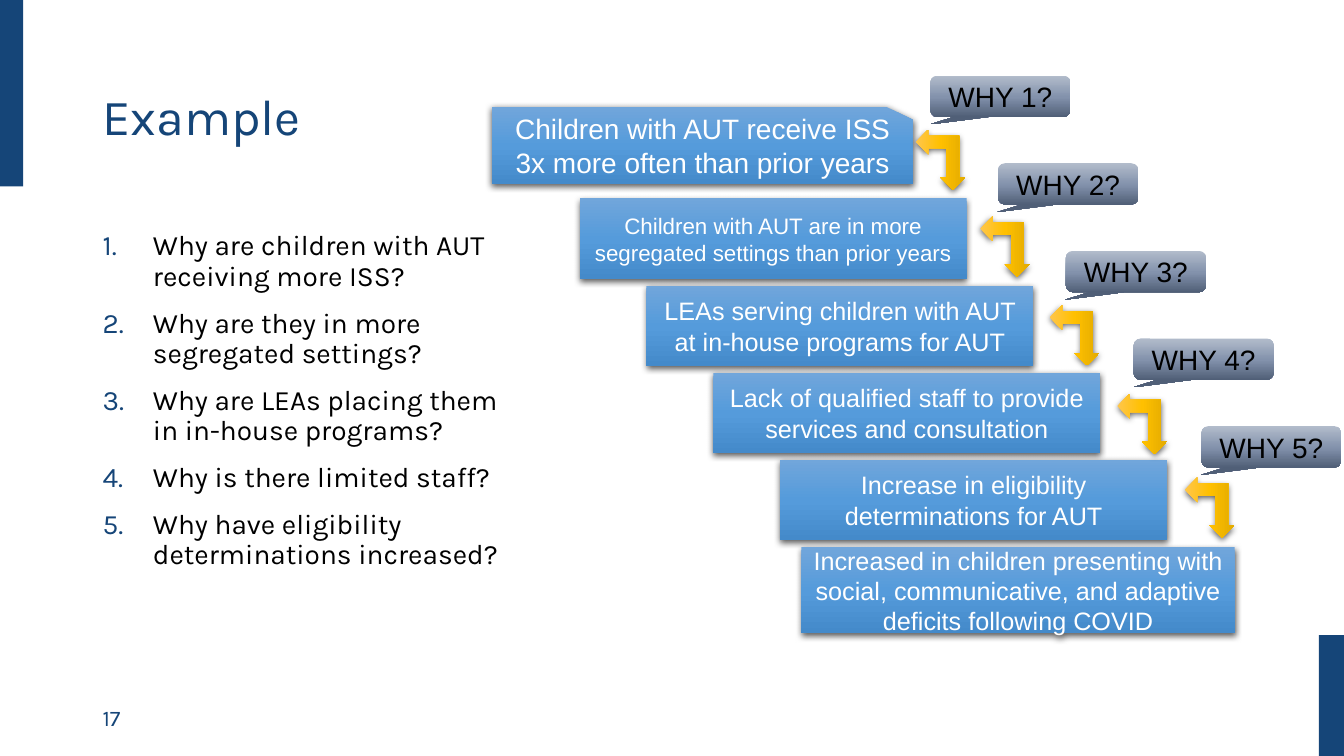
"""Build the "Five Whys" example slide."""
from dataclasses import dataclass
from typing import Optional

from pptx import Presentation
from pptx.dml.color import RGBColor
from pptx.enum.shapes import MSO_SHAPE
from pptx.enum.text import MSO_ANCHOR, PP_ALIGN
from pptx.oxml import parse_xml
from pptx.oxml.ns import nsdecls
from pptx.shapes.autoshape import Shape
from pptx.text.text import _Paragraph
from pptx.util import Pt

NAVY, BLACK, WHITE = "154578", "000000", "FFFFFF"
BLUE = ((0, "71A6DB"), (50, "559BDB"), (100, "448ACA"))
GOLD = ((0, "FFC64B"), (50, "FFC000"), (100, "E3AB00"))
SLATE = ((0, "B2BCCB"), (52, "8392AC"), (100, "505F77"))
Stops = tuple[tuple[int, str], ...]


@dataclass
class Frame:
    left: float
    top: float
    width: float
    height: float

    def sides(self) -> list[Pt]:
        return [Pt(n) for n in (self.left, self.top, self.width, self.height)]


@dataclass
class Style:
    size: float
    font: str
    ink: str
    align: PP_ALIGN = PP_ALIGN.LEFT
    anchor: MSO_ANCHOR = MSO_ANCHOR.MIDDLE
    pitch: float = 1.0
    gap: float = 0
    listed: bool = False


@dataclass
class Cause:
    text: str
    size: float
    frame: Frame


def color(code: str) -> RGBColor:
    return RGBColor.from_string(code)


def number(para: _Paragraph) -> None:
    props = para._p.get_or_add_pPr()
    props.set("marL", str(Pt(36)))
    props.set("indent", str(-Pt(36)))
    props.append(parse_xml(f'<a:buClr {nsdecls("a")}><a:srgbClr val="{NAVY}"/></a:buClr>'))
    props.append(parse_xml(f'<a:buAutoNum {nsdecls("a")} type="arabicPeriod"/>'))


def write(shape: Shape, lines: list[str], style: Style) -> None:
    frame = shape.text_frame
    frame.word_wrap = True
    frame.vertical_anchor = style.anchor
    for i, line in enumerate(lines):
        para = frame.add_paragraph() if i else frame.paragraphs[0]
        if style.listed:
            number(para)
        para.alignment = style.align
        para.line_spacing = style.pitch
        para.space_before = Pt(style.gap if i else 0)
        run = para.add_run()
        run.text = line
        run.font.size = Pt(style.size)
        run.font.name = style.font
        run.font.color.rgb = color(style.ink)


def shade(shape: Shape, stops: Stops, shadow: bool) -> None:
    shape.line.fill.background()
    shape.shadow.inherit = False
    shape.fill.background()
    props = shape._element.spPr
    marks = "".join(f'<a:gs pos="{pos * 1000}"><a:srgbClr val="{code}"/></a:gs>' for pos, code in stops)
    blend = parse_xml(
        f'<a:gradFill {nsdecls("a")} rotWithShape="1"><a:gsLst>{marks}</a:gsLst>'
        '<a:lin ang="5400000" scaled="0"/></a:gradFill>')
    props.replace(props.find("{*}noFill"), blend)
    if shadow:
        props.find("{*}effectLst").append(parse_xml(
            f'<a:outerShdw {nsdecls("a")} blurRad="{Pt(4.5)}" dist="{Pt(1.5)}" dir="5400000" '
            f'algn="ctr" rotWithShape="0"><a:srgbClr val="{BLACK}"><a:alpha val="63000"/>'
            '</a:srgbClr></a:outerShdw>'))


def label(slide, frame: Frame, lines: list[str], style: Style) -> None:
    write(slide.shapes.add_textbox(*frame.sides()), lines, style)


def bar(slide, frame: Frame) -> None:
    shape = slide.shapes.add_shape(MSO_SHAPE.RECTANGLE, *frame.sides())
    shape.shadow.inherit = False
    shape.fill.solid()
    shape.fill.fore_color.rgb = color(NAVY)
    shape.line.fill.background()


def snipped(slide, frame: Frame) -> Shape:
    left, top = frame.left, frame.top
    right, base = left + frame.width, top + frame.height
    pen = slide.shapes.build_freeform(Pt(left), Pt(top))
    points = [(right - 19.4, top), (right, top + 9.4), (right, base), (left, base)]
    pen.add_line_segments([(Pt(x), Pt(y)) for x, y in points], close=True)
    return pen.convert_to_shape()


def box(slide, cause: Cause, shape: Optional[Shape] = None) -> None:
    shape = shape or slide.shapes.add_shape(MSO_SHAPE.RECTANGLE, *cause.frame.sides())
    shade(shape, BLUE, True)
    write(shape, [cause.text], Style(cause.size, "Arial", WHITE, PP_ALIGN.CENTER))


def callout(slide, frame: Frame, text: str) -> None:
    shape = slide.shapes.add_shape(MSO_SHAPE.ROUNDED_RECTANGULAR_CALLOUT, *frame.sides())
    for i, value in enumerate((-0.506, 0.683, 0.167)):
        shape.adjustments[i] = value
    shade(shape, SLATE, False)
    write(shape, [text], Style(20, "Arial", BLACK, PP_ALIGN.CENTER))


def arrow(slide, left: float, top: float) -> None:
    shape = slide.shapes.add_shape(MSO_SHAPE.LEFT_UP_ARROW, *Frame(left, top, 43.2, 35.3).sides())
    shape.rotation = 270
    shade(shape, GOLD, True)


def main() -> None:
    deck = Presentation()
    deck.slide_width, deck.slide_height = Pt(960), Pt(540)
    slide = deck.slides.add_slide(deck.slide_layouts[6])

    label(slide, Frame(66.2, 498.2, 216, 28.8), ["17"], Style(16, "Karla", NAVY))
    bar(slide, Frame(-1.4, 0, 18, 133.2))
    bar(slide, Frame(942, 453.6, 18, 86.4))
    label(slide, Frame(66.2, 36.7, 309.6, 97.2), ["Example"], Style(36, "Karla", NAVY, pitch=0.9))
    label(slide, Frame(66.2, 162, 309.6, 300.2), [
        "Why are children with AUT receiving more ISS?",
        "Why are they in more segregated settings?",
        "Why are LEAs placing them in in-house programs?",
        "Why is there limited staff?",
        "Why have eligibility determinations increased?",
    ], Style(20, "Karla", BLACK, anchor=MSO_ANCHOR.TOP, pitch=0.9, gap=12, listed=True))

    first = Cause("Children with AUT receive ISS 3x more often than prior years",
                  20, Frame(351.4, 76.3, 301, 55.4))
    box(slide, first, snipped(slide, first.frame))
    steps = [
        ("Children with AUT are in more segregated settings than prior years", 16),
        ("LEAs serving children with AUT at in-house programs for AUT", 18),
        ("Lack of qualified staff to provide services and consultation", 18),
        ("Increase in eligibility determinations for AUT", 18),
    ]
    for i, (text, size) in enumerate(steps):
        box(slide, Cause(text, size, Frame(414 + 47.75 * i, 141.8 + 62.2 * i, 276.5, 57.6)))
    box(slide, Cause("Increased in children presenting with social, communicative, "
                     "and adaptive deficits following COVID", 18, Frame(572.4, 391, 309.6, 61.2)))

    turns = [(650.2, 96.5), (696.2, 158.4), (745.9, 221.8), (794.2, 285.1), (842.4, 344.9)]
    for i, (left, top) in enumerate(turns):
        callout(slide, Frame(664.6 + 48.4 * i, 54 + 62.6 * i, 100, 29.5), f"WHY {i + 1}?")
        arrow(slide, left, top)

    deck.save("out.pptx")


if __name__ == "__main__":
    main()
